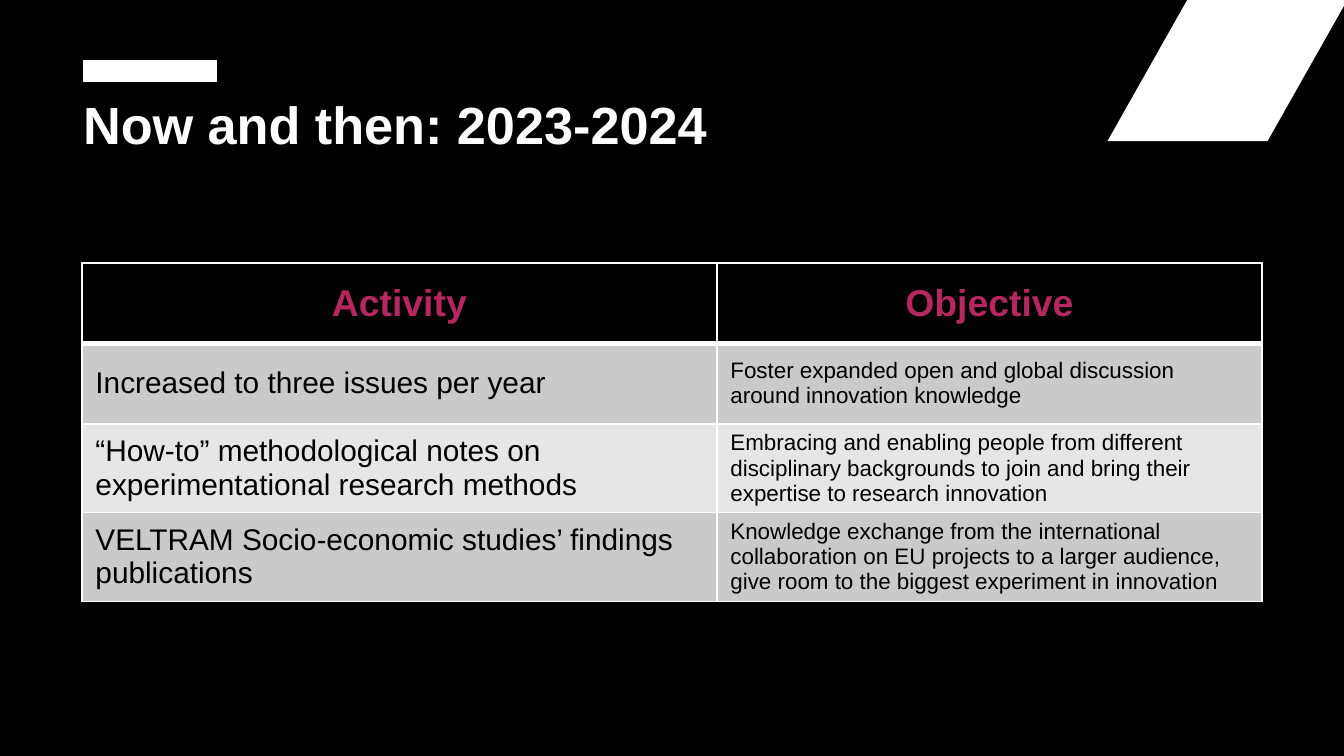
from lxml import etree
from pptx import Presentation
from pptx.dml.color import RGBColor
from pptx.enum.shapes import MSO_CONNECTOR, MSO_SHAPE
from pptx.enum.text import MSO_ANCHOR, PP_ALIGN
from pptx.oxml.ns import qn
from pptx.util import Cm, Pt

STRAIGHT = MSO_CONNECTOR.STRAIGHT
PARALLELOGRAM = MSO_SHAPE.PARALLELOGRAM
TOP, MIDDLE = MSO_ANCHOR.TOP, MSO_ANCHOR.MIDDLE
LEFT, CENTER = PP_ALIGN.LEFT, PP_ALIGN.CENTER

BLACK = RGBColor(0x00, 0x00, 0x00)
WHITE = RGBColor(0xFF, 0xFF, 0xFF)
MAGENTA = RGBColor(0xB6, 0x27, 0x5F)
DARK_GRAY = RGBColor(0xCA, 0xCA, 0xCA)
LIGHT_GRAY = RGBColor(0xE6, 0xE6, 0xE6)
FONT = "Arial"

ROWS = [
    ("Activity", "Objective"),
    ("Increased to three issues per year",
     "Foster expanded open and global discussion around innovation knowledge"),
    ("“How-to” methodological notes on experimentational research methods",
     "Embracing and enabling people from different disciplinary backgrounds "
     "to join and bring their expertise to research innovation"),
    ("VELTRAM Socio-economic studies’ findings publications",
     "Knowledge exchange from the international collaboration on EU projects "
     "to a larger audience, give room to the biggest experiment in innovation"),
]
COLUMN_WIDTHS = [Cm(12), Cm(10.3)]
ROW_HEIGHTS = [Cm(1.52), Cm(1.52), Cm(1.68), Cm(1.68)]
ROW_FILLS = [BLACK, DARK_GRAY, LIGHT_GRAY, DARK_GRAY]
BODY_SIZES = [Pt(16), Pt(12)]


def style_font(font, size, color, bold):
    font.name = FONT
    font.size = size
    font.bold = bold
    font.color.rgb = color


def add_border(cell, side, width):
    properties = cell._tc.get_or_add_tcPr()
    line = etree.SubElement(properties, qn(f"a:ln{side}"), w=str(width))
    fill = etree.SubElement(line, qn("a:solidFill"))
    etree.SubElement(fill, qn("a:srgbClr"), val=str(WHITE))


deck = Presentation()
deck.slide_width = Cm(25.4)
deck.slide_height = Cm(14.29)
page = deck.slides.add_slide(deck.slide_layouts[5])
page.background.fill.solid()
page.background.fill.fore_color.rgb = BLACK

corner = page.shapes.add_shape(PARALLELOGRAM, Cm(20.93), Cm(-0.03), Cm(4.55), Cm(2.7))
corner.adjustments[0] = 0.565
corner.shadow.inherit = False
corner.fill.solid()
corner.fill.fore_color.rgb = WHITE
corner.line.fill.background()

accent = page.shapes.add_connector(STRAIGHT, Cm(1.57), Cm(1.34), Cm(4.1), Cm(1.34))
accent.line.color.rgb = WHITE
accent.line.width = Pt(12)
etree.SubElement(accent._element.spPr, qn("a:effectLst"))

title = page.shapes.title
title.left, title.top, title.width, title.height = Cm(1.57), Cm(1.85), Cm(16.15), Cm(1.4)
title.text_frame.margin_left = 0
title.text_frame.vertical_anchor = TOP
title.text_frame.text = "Now and then: 2023-2024"
para = title.text_frame.paragraphs[0]
para.alignment = LEFT
para.line_spacing = 0.8
style_font(para.font, Pt(28), WHITE, True)

table = page.shapes.add_table(
    len(ROWS), len(COLUMN_WIDTHS), Cm(1.55), Cm(4.97),
    sum(COLUMN_WIDTHS), sum(ROW_HEIGHTS),
).table
for column, width in zip(table.columns, COLUMN_WIDTHS):
    column.width = width
for row, height in zip(table.rows, ROW_HEIGHTS):
    row.height = height

for row_index, texts in enumerate(ROWS):
    is_header = row_index == 0
    for column_index, text in enumerate(texts):
        cell = table.cell(row_index, column_index)
        cell.text = text
        cell.vertical_anchor = MIDDLE
        for side in "LRTB":
            thick = (is_header and side == "B") or (row_index == 1 and side == "T")
            add_border(cell, side, Pt(3) if thick else Pt(1))
        cell.fill.solid()
        cell.fill.fore_color.rgb = ROW_FILLS[row_index]
        para = cell.text_frame.paragraphs[0]
        if is_header:
            para.alignment = CENTER
            style_font(para.font, Pt(20), MAGENTA, True)
        else:
            style_font(para.font, BODY_SIZES[column_index], BLACK, False)

deck.save("out.pptx")
